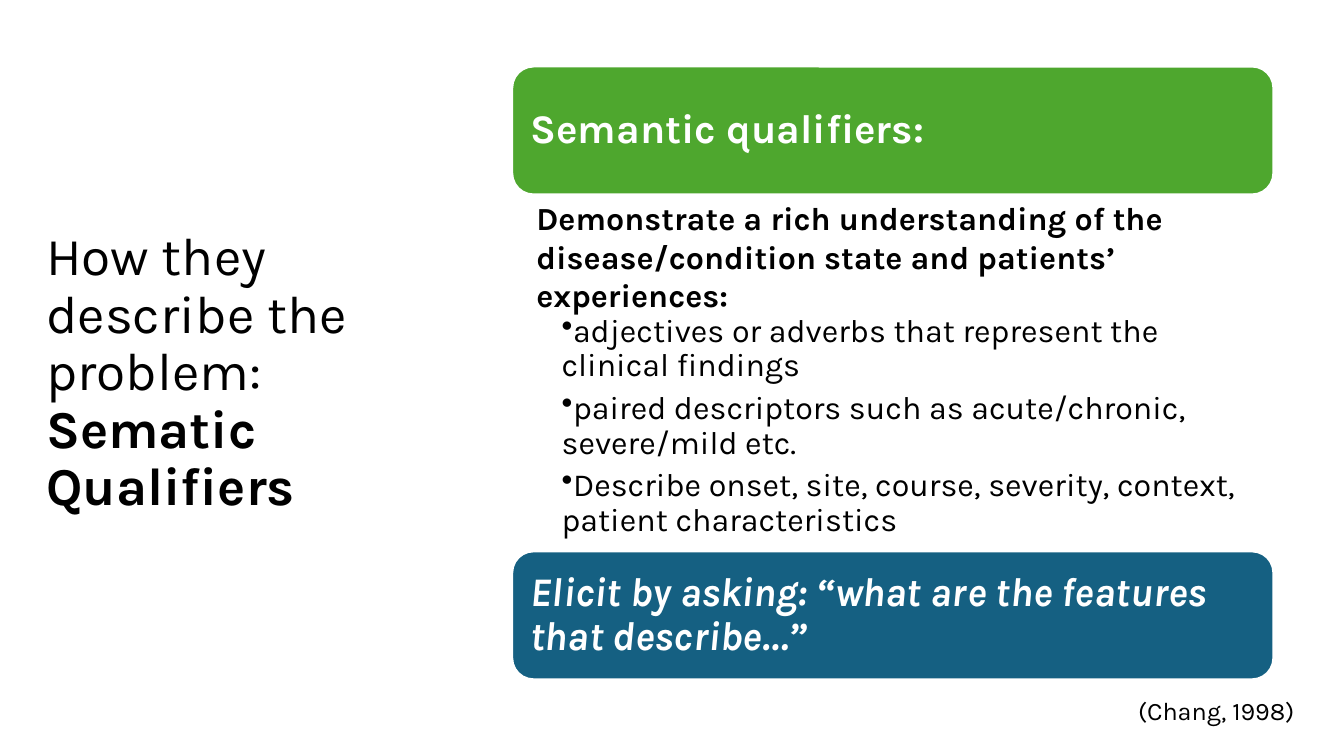
from lxml.etree import SubElement
from pptx import Presentation
from pptx.dml.color import RGBColor
from pptx.enum.shapes import MSO_SHAPE as Shape
from pptx.enum.text import MSO_ANCHOR as Anchor
from pptx.oxml.ns import qn
from pptx.util import Inches, Pt

COLORS = {"green": "4EA72E", "blue": "156082", "white": "FFFFFF", "black": "000000"}
FONT = "Karla"


def color(name):
    return RGBColor.from_string(COLORS[name])


def add_span(para, text, size, tint="black", bold=False, italic=False):
    span = para.add_run()
    span.text = text
    span.font.name = FONT
    span.font.size = Pt(size)
    span.font.bold = bold
    span.font.italic = italic
    span.font.color.rgb = color(tint)


def set_frame(frame, anchor, side, edge):
    frame.word_wrap = True
    frame.vertical_anchor = anchor
    frame.margin_left = frame.margin_right = Inches(side)
    frame.margin_top = frame.margin_bottom = Inches(edge)


def add_text_box(page, box, anchor=Anchor.TOP, side=0.1, edge=0.05):
    frame = page.shapes.add_textbox(*map(Inches, box)).text_frame
    set_frame(frame, anchor, side, edge)
    return frame


def add_bullet(para):
    properties = para._p.get_or_add_pPr()
    properties.set("marL", str(Inches(0.25)))
    properties.set("indent", "0")
    SubElement(properties, qn("a:buChar"), char="•")


def add_title(page, box):
    para = add_text_box(page, box, Anchor.MIDDLE).paragraphs[0]
    para.line_spacing = 0.9
    add_span(para, "How they describe the problem: ", 38)
    para.add_line_break()
    add_span(para, "Sematic Qualifiers", 38, bold=True)


def add_banner(page, box, text, fill, italic=False):
    banner = page.shapes.add_shape(Shape.ROUNDED_RECTANGLE, *map(Inches, box))
    banner.shadow.inherit = False
    banner.fill.solid()
    banner.fill.fore_color.rgb = color(fill)
    banner.line.color.rgb = color("white")
    banner.line.width = Pt(1.5)
    set_frame(banner.text_frame, Anchor.MIDDLE, 0.12, 0.12)
    para = banner.text_frame.paragraphs[0]
    para.alignment = 1
    para.line_spacing = 0.9
    add_span(para, text, 29, "white", bold=True, italic=italic)


def add_details(page, box):
    frame = add_text_box(page, box, side=0.24, edge=0.04)
    add_span(
        frame.paragraphs[0],
        "Demonstrate a rich understanding of the disease/condition state "
        "and patients’ experiences:",
        23,
        bold=True,
    )
    for text in (
        "adjectives or adverbs that represent the clinical findings",
        "paired descriptors such as acute/chronic, severe/mild etc.",
        "Describe onset, site, course, severity, context, patient characteristics",
    ):
        para = frame.add_paragraph()
        para.level = 1
        para.line_spacing = 0.9
        para.space_after = Pt(5.5)
        add_bullet(para)
        add_span(para, text, 23)


def add_panel(page, box):
    left, top, width, height = box
    banner_height = 1.27
    bottom_top = top + height - banner_height
    details_top = top + banner_height
    add_banner(page, (left, top, width, banner_height), "Semantic qualifiers:", "green")
    add_details(page, (left, details_top, width, bottom_top - details_top))
    add_banner(
        page,
        (left, bottom_top, width, banner_height),
        "Elicit by asking: “what are the features that describe…”",
        "blue",
        italic=True,
    )


def add_citation(page, box):
    para = add_text_box(page, box).paragraphs[0]
    add_span(para, "(Chang, 1998)", 18)


def main():
    deck = Presentation()
    deck.slide_width = Inches(13.33)
    deck.slide_height = Inches(7.5)
    page = deck.slides.add_slide(deck.slide_layouts[6])
    add_title(page, (0.36, 0.65, 4.01, 6.11))
    add_panel(page, (5.08, 0.66, 7.55, 6.08))
    add_citation(page, (11.19, 6.85, 2.14, 0.4))
    deck.save("out.pptx")


if __name__ == "__main__":
    main()
